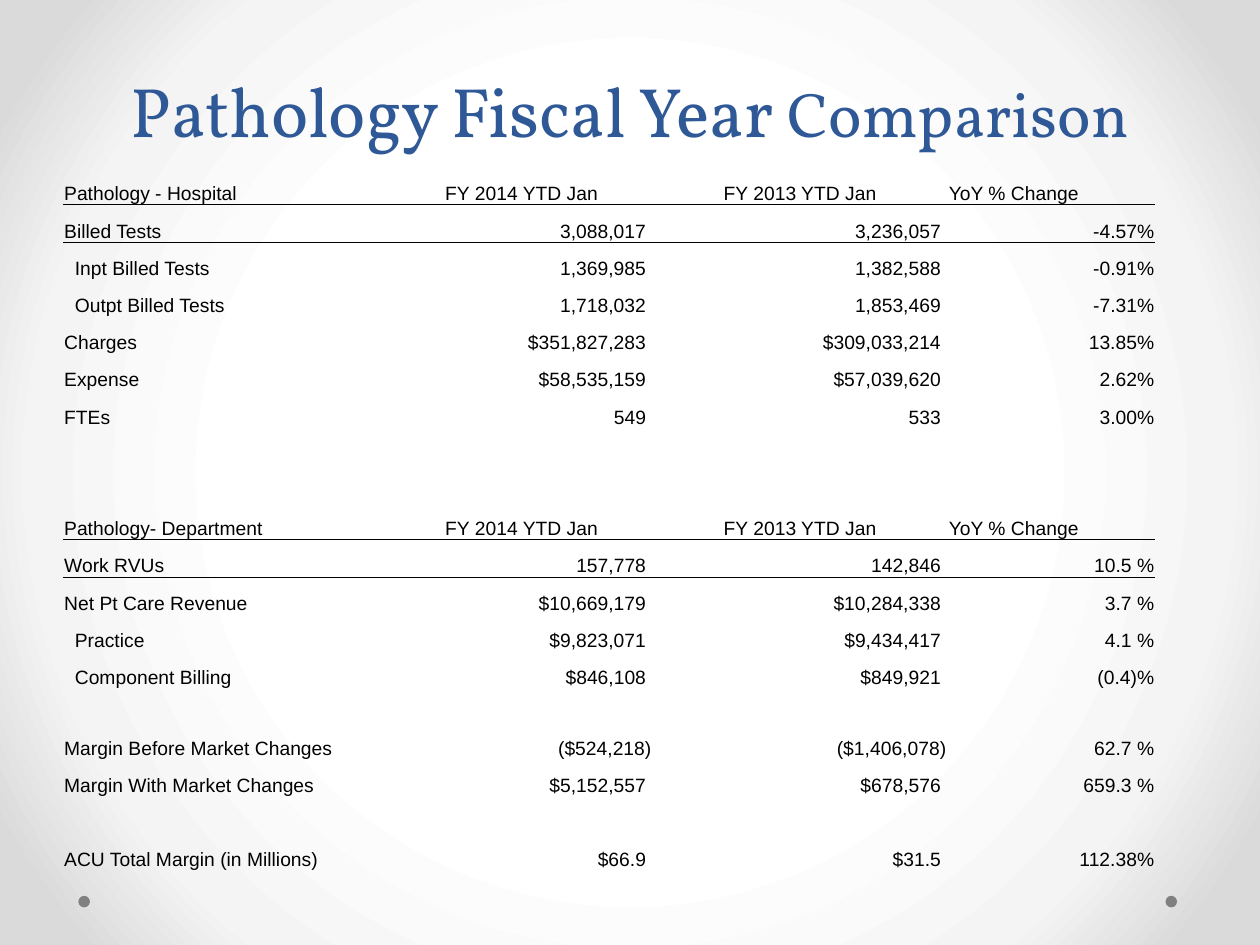
from dataclasses import dataclass

from lxml.etree import SubElement as Sub
from pptx import Presentation
from pptx.dml.color import RGBColor as Rgb
from pptx.enum.shapes import MSO_SHAPE as Shape
from pptx.enum.text import MSO_ANCHOR as Anchor, PP_ALIGN as Align
from pptx.oxml import parse_xml as to_xml
from pptx.oxml.ns import nsdecls, qn
from pptx.util import Pt


@dataclass(frozen=True)
class Theme:
    """Colours, fonts and type sizes of the slide."""
    blue: str = "2F5897"
    ink: str = "000000"
    dot: str = "808080"
    glow: tuple = ((50, "FFFFFF"), (76, "F4F4F4"), (92, "DADADA"))
    serif: str = "Vollkorn"
    sans: str = "Arial"
    big: int = 40
    mid: int = 36
    small: int = 11


THEME = Theme()
PLAIN = "{2D5ABB26-0587-4C30-8999-92F81FD0307C}"
YEARS = ("FY 2014 YTD Jan", "FY 2013 YTD Jan", "YoY % Change")
BLANK = ("",) * 4
ROWS = [
    ("Pathology - Hospital", *YEARS),
    ("Billed Tests", "3,088,017", "3,236,057", "-4.57%"),
    ("Inpt Billed Tests", "1,369,985", "1,382,588", "-0.91%"),
    ("Outpt Billed Tests", "1,718,032", "1,853,469", "-7.31%"),
    ("Charges", "$351,827,283", "$309,033,214", "13.85%"),
    ("Expense", "$58,535,159", "$57,039,620", "2.62%"),
    ("FTEs", "549", "533", "3.00%"),
    BLANK,
    BLANK,
    ("Pathology- Department", *YEARS),
    ("Work RVUs", "157,778", "142,846", "10.5 %"),
    ("Net Pt Care Revenue", "$10,669,179", "$10,284,338", "3.7 %"),
    ("Practice", "$9,823,071", "$9,434,417", "4.1 %"),
    ("Component Billing", "$846,108", "$849,921", "(0.4)%"),
    ("Margin Before Market Changes", "($524,218)", "($1,406,078)", "62.7 %"),
    ("Margin With Market Changes", "$5,152,557", "$678,576", "659.3 %"),
    BLANK,
    ("ACU Total Margin (in Millions)", "$66.9", "$31.5", "112.38%"),
]
HEADS = (0, 9)
TALL = 14
SUBS = {"Inpt Billed Tests", "Outpt Billed Tests", "Practice",
        "Component Billing"}
COLS = (187.2, 149.8, 168.5, 118.8)


def paint(slide):
    """Fill the background with a round gradient."""
    slide.background.fill.gradient()
    grad = slide.element.find(".//" + qn("a:gradFill"))
    grad.clear()
    stops = Sub(grad, qn("a:gsLst"))
    for pos, tint in THEME.glow:
        stop = Sub(stops, qn("a:gs"), pos=str(pos * 1000))
        Sub(stop, qn("a:srgbClr"), val=tint)
    ring = Sub(grad, qn("a:path"), path="circle")
    Sub(ring, qn("a:fillToRect"), dict.fromkeys("ltrb", "50000"))


def add_dot(slide, left):
    """Add a small grey dot near the foot of the slide."""
    dot = slide.shapes.add_shape(
        Shape.OVAL, Pt(left), Pt(511.9), Pt(6.6), Pt(6.6))
    dot.shadow.inherit = False
    dot.fill.solid()
    dot.fill.fore_color.rgb = Rgb.from_string(THEME.dot)
    dot.line.fill.background()


def add_title(slide):
    """Add the title in two type sizes."""
    frame = slide.shapes.add_textbox(
        Pt(36), Pt(-36), Pt(648), Pt(126)).text_frame
    frame.word_wrap = True
    frame.vertical_anchor = Anchor.BOTTOM
    para = frame.paragraphs[0]
    para.alignment = Align.CENTER
    para.line_spacing = Pt(58)
    para.font.name = THEME.serif
    para.font.color.rgb = Rgb.from_string(THEME.blue)
    for text, size in (("Pathology Fiscal Year ", THEME.big),
                       ("Comparison", THEME.mid)):
        run = para.add_run()
        run.text = text
        run.font.size = Pt(size)


def rule(cell, side):
    """Draw a thin line on one side of a cell."""
    line = to_xml(
        f'<a:{side} {nsdecls("a")} w="6350"><a:solidFill>'
        f'<a:srgbClr val="{THEME.ink}"/></a:solidFill></a:{side}>')
    cell._tc.get_or_add_tcPr().insert(0, line)


def align(row, col):
    """Pick the alignment of a cell from its place."""
    if col == 0 or (row in HEADS and col == 3):
        return Align.LEFT
    return Align.CENTER if row in HEADS else Align.RIGHT


def fill_cell(cell, text, side):
    """Write and style one cell."""
    pad = side == Align.RIGHT and not text.endswith((")", "%"))
    cell.margin_left = Pt(6.8 if text in SUBS else 0.7)
    cell.margin_right = Pt(3.8 if pad else 0.7)
    cell.margin_top = Pt(0.7)
    cell.margin_bottom = 0
    cell.vertical_anchor = Anchor.BOTTOM
    cell.fill.background()
    para = cell.text_frame.paragraphs[0]
    para.text = text
    para.alignment = side
    para.font.name = THEME.sans
    para.font.size = Pt(THEME.small)
    para.font.color.rgb = Rgb.from_string(THEME.ink)


def add_grid(slide):
    """Add the table of both fiscal years."""
    frame = slide.shapes.add_table(
        len(ROWS), len(COLS), Pt(36), Pt(95.8), Pt(sum(COLS)), Pt(401.7))
    grid = frame.table
    grid.first_row = grid.horz_banding = False
    frame.element.find(".//" + qn("a:tableStyleId")).text = PLAIN
    for col, width in zip(grid.columns, COLS):
        col.width = Pt(width)
    for row, texts in enumerate(ROWS):
        grid.rows[row].height = Pt(40.3 if row == TALL else 21.26)
        for col, text in enumerate(texts):
            cell = grid.cell(row, col)
            fill_cell(cell, text, align(row, col))
            if row in HEADS:
                rule(cell, "lnB")
            elif row - 1 in HEADS:
                rule(cell, "lnT")


def main():
    """Build the slide and save it."""
    deck = Presentation()
    deck.slide_width, deck.slide_height = Pt(720), Pt(540)
    slide = deck.slides.add_slide(deck.slide_layouts[6])
    paint(slide)
    for left in (666, 44.8):
        add_dot(slide, left)
    add_title(slide)
    add_grid(slide)
    deck.save("out.pptx")


if __name__ == "__main__":
    main()
